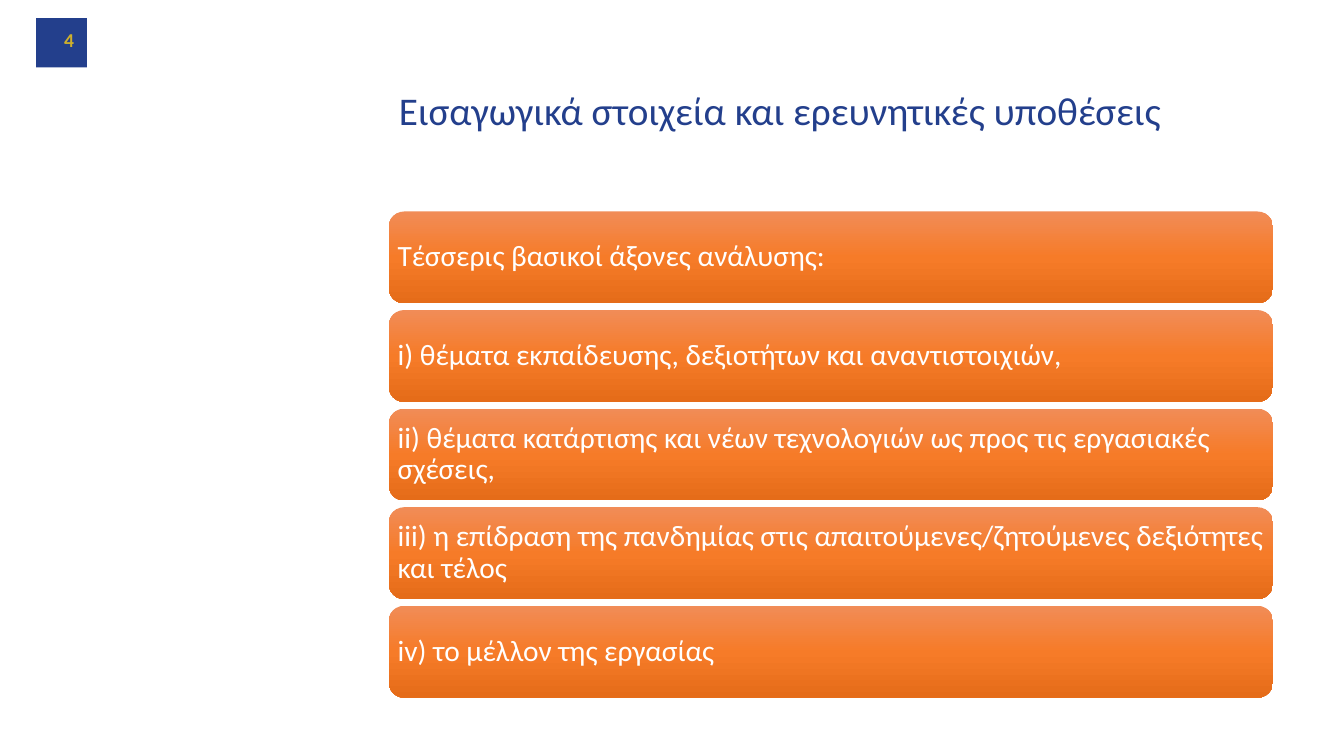
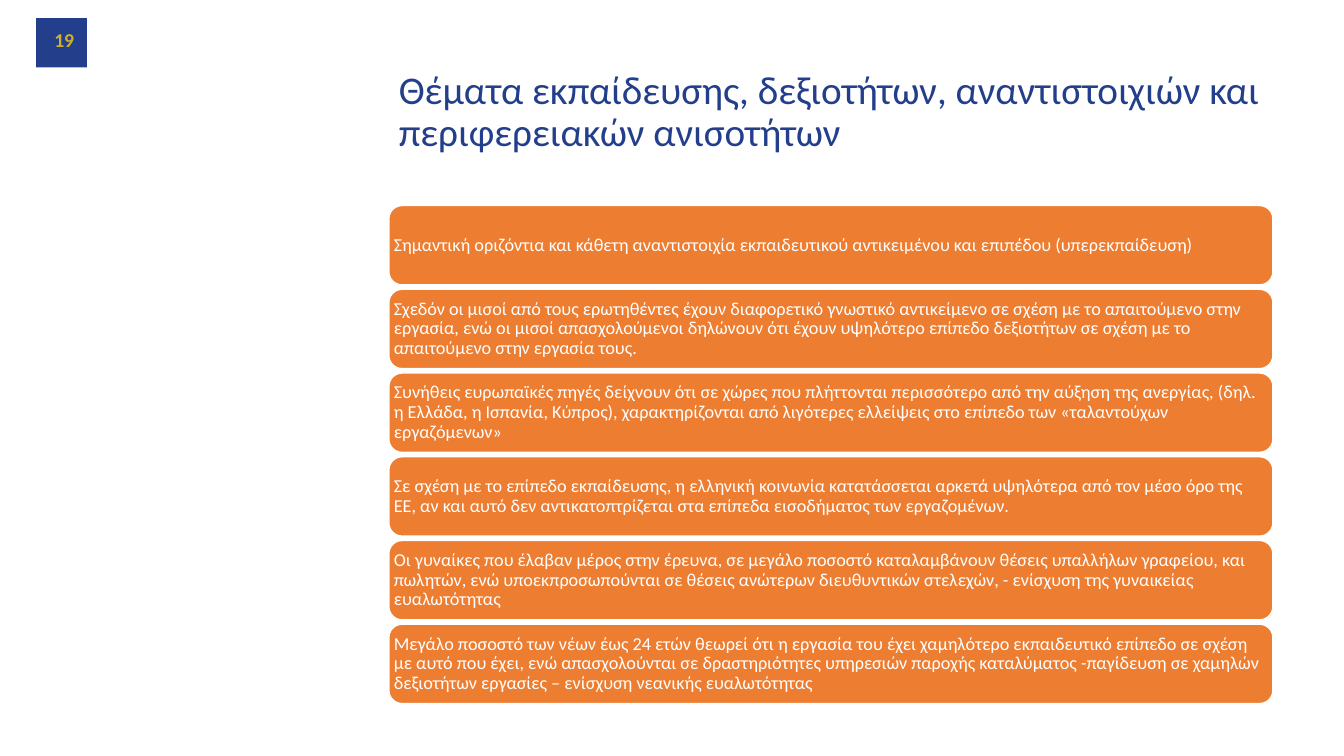
from copy import deepcopy

from pptx import Presentation
from pptx import util as u
from pptx.dml.color import RGBColor
from pptx.enum import shapes, text
from pptx.oxml.ns import qn

BLUE = RGBColor(0x23, 0x3F, 0x8C)
GOLD = RGBColor(0xCE, 0xB0, 0x2C)
WHITE = RGBColor(0xFF, 0xFF, 0xFF)
ORANGE = RGBColor(0xED, 0x7D, 0x31)
SHADES = (
    (0, RGBColor(0xF1, 0x8C, 0x57)),
    (0.5, RGBColor(0xF6, 0x7B, 0x28)),
    (1, RGBColor(0xE5, 0x6C, 0x19)),
)

LEFT, WIDTH = 9.8, 22.28
TITLE = (LEFT, 1, WIDTH, 3.68)
BADGE = (0.91, 0.46, 1.28, 1.24)
NUMBER = (1, 0.48, 1.12, 1.02)

HEAD = {"size": u.Pt(28), "color": BLUE, "spacing": 0.9}
PAGE = {"size": u.Pt(14), "color": GOLD, "bold": True,
        "align": text.PP_ALIGN.RIGHT, "after": u.Pt(6)}

AXES = {
    "number": "4",
    "title": "Εισαγωγικά στοιχεία και ερευνητικές υποθέσεις",
    "box": (LEFT, 5.33, WIDTH, 12.25),
    "gap": 0.17,
    "inset": 0.11,
    "size": 21,
    "shaded": True,
    "items": (
        "Τέσσερις βασικοί άξονες ανάλυσης:",
        "i) θέματα εκπαίδευσης, δεξιοτήτων και αναντιστοιχιών,",
        "ii) θέματα κατάρτισης και νέων τεχνολογιών ως προς τις εργασιακές σχέσεις,",
        "iii) η επίδραση της πανδημίας στις απαιτούμενες/ζητούμενες δεξιότητες και τέλος",
        "iv) το μέλλον της εργασίας",
    ),
}
SKILLS = {
    "number": "19",
    "title": "Θέματα εκπαίδευσης, δεξιοτήτων, αναντιστοιχιών και περιφερειακών ανισοτήτων",
    "box": (LEFT, 5.18, WIDTH, 12.55),
    "gap": 0.11,
    "inset": 0.03,
    "size": 13,
    "shaded": False,
    "items": (
        "Σημαντική οριζόντια και κάθετη αναντιστοιχία εκπαιδευτικού αντικειμένου "
        "και επιπέδου (υπερεκπαίδευση)",
        "Σχεδόν οι μισοί από τους ερωτηθέντες έχουν διαφορετικό γνωστικό αντικείμενο "
        "σε σχέση με το απαιτούμενο στην εργασία, ενώ οι μισοί απασχολούμενοι δηλώνουν "
        "ότι έχουν υψηλότερο επίπεδο δεξιοτήτων σε σχέση με το απαιτούμενο στην εργασία τους.",
        "Συνήθεις ευρωπαϊκές πηγές δείχνουν ότι σε χώρες που πλήττονται περισσότερο "
        "από την αύξηση της ανεργίας, (δηλ. η Ελλάδα, η Ισπανία, Κύπρος), χαρακτηρίζονται "
        "από λιγότερες ελλείψεις στο επίπεδο των «ταλαντούχων εργαζόμενων»",
        "Σε σχέση με το επίπεδο εκπαίδευσης, η ελληνική κοινωνία κατατάσσεται αρκετά "
        "υψηλότερα από τον μέσο όρο της ΕΕ, αν και αυτό δεν αντικατοπτρίζεται στα επίπεδα "
        "εισοδήματος των εργαζομένων.",
        "Οι γυναίκες που έλαβαν μέρος στην έρευνα, σε μεγάλο ποσοστό καταλαμβάνουν "
        "θέσεις υπαλλήλων γραφείου, και πωλητών, ενώ υποεκπροσωπούνται σε θέσεις ανώτερων "
        "διευθυντικών στελεχών, - ενίσχυση της γυναικείας ευαλωτότητας",
        "Μεγάλο ποσοστό των νέων έως 24 ετών θεωρεί ότι η εργασία του έχει χαμηλότερο "
        "εκπαιδευτικό επίπεδο σε σχέση με αυτό που έχει, ενώ απασχολούνται σε δραστηριότητες "
        "υπηρεσιών παροχής καταλύματος -παγίδευση σε χαμηλών δεξιοτήτων εργασίες – ενίσχυση "
        "νεανικής ευαλωτότητας",
    ),
}


def assign(item, values):
    """Set each named attribute of an object."""
    for name, value in values.items():
        setattr(item, name, value)


def write(shape, words, size, color, bold=False, align=text.PP_ALIGN.LEFT,
          spacing=1.0, after=0, inset=None):
    """Put one styled paragraph in a shape, centred vertically."""
    frame = shape.text_frame
    assign(frame, {"word_wrap": True, "vertical_anchor": text.MSO_ANCHOR.MIDDLE})
    if inset is not None:
        sides = ("margin_left", "margin_top", "margin_right", "margin_bottom")
        assign(frame, dict.fromkeys(sides, u.Cm(inset)))
    para = frame.paragraphs[0]
    assign(para, {"alignment": align, "line_spacing": spacing, "space_after": after})
    run = para.add_run()
    run.text = words
    assign(run.font, {"name": "Calibri", "size": size, "bold": bold})
    run.font.color.rgb = color


def label(slide, box, words, style):
    """Add a text box at a place given in centimetres."""
    write(slide.shapes.add_textbox(*map(u.Cm, box)), words, **style)


def block(slide, kind, box, color):
    """Add a plain filled shape without line or shadow."""
    shape = slide.shapes.add_shape(kind, *map(u.Cm, box))
    shape.shadow.inherit = False
    shape.fill.solid()
    shape.fill.fore_color.rgb = color
    shape.line.fill.background()
    return shape


def shade(shape):
    """Fill a shape with the orange gradient from top to bottom."""
    shape.fill.gradient()
    shape.fill.gradient_angle = 270
    stops = shape._element.spPr.find(qn("a:gradFill")).find(qn("a:gsLst"))
    stops.append(deepcopy(stops[0]))
    for stop, (place, color) in zip(shape.fill.gradient_stops, SHADES):
        stop.position = place
        stop.color.rgb = color


def stack(slide, box, items, gap, size, inset, shaded):
    """Share a box among equal rounded bands, one for each item."""
    left, top, width, height = box
    band = (height - gap * (len(items) - 1)) / len(items)
    for row, words in enumerate(items):
        place = (left, top + row * (band + gap), width, band)
        shape = block(slide, shapes.MSO_SHAPE.ROUNDED_RECTANGLE, place, ORANGE)
        if shaded:
            shade(shape)
        else:
            shape.line.color.rgb = WHITE
            shape.line.width = u.Pt(1)
        write(shape, words, u.Pt(size), WHITE, spacing=0.9, inset=inset)


def build(deck, number, title, **bands):
    """Add a slide with its number badge, title and stack of bands."""
    slide = deck.slides.add_slide(deck.slide_layouts[6])
    block(slide, shapes.MSO_SHAPE.RECTANGLE, BADGE, BLUE)
    label(slide, TITLE, title, HEAD)
    label(slide, NUMBER, number, PAGE)
    stack(slide, **bands)


def main():
    """Build and save the deck."""
    deck = Presentation()
    assign(deck, {"slide_width": u.Cm(33.87), "slide_height": u.Cm(19.05)})
    for page in (AXES, SKILLS):
        build(deck, **page)
    deck.save("out.pptx")


if __name__ == "__main__":
    main()
